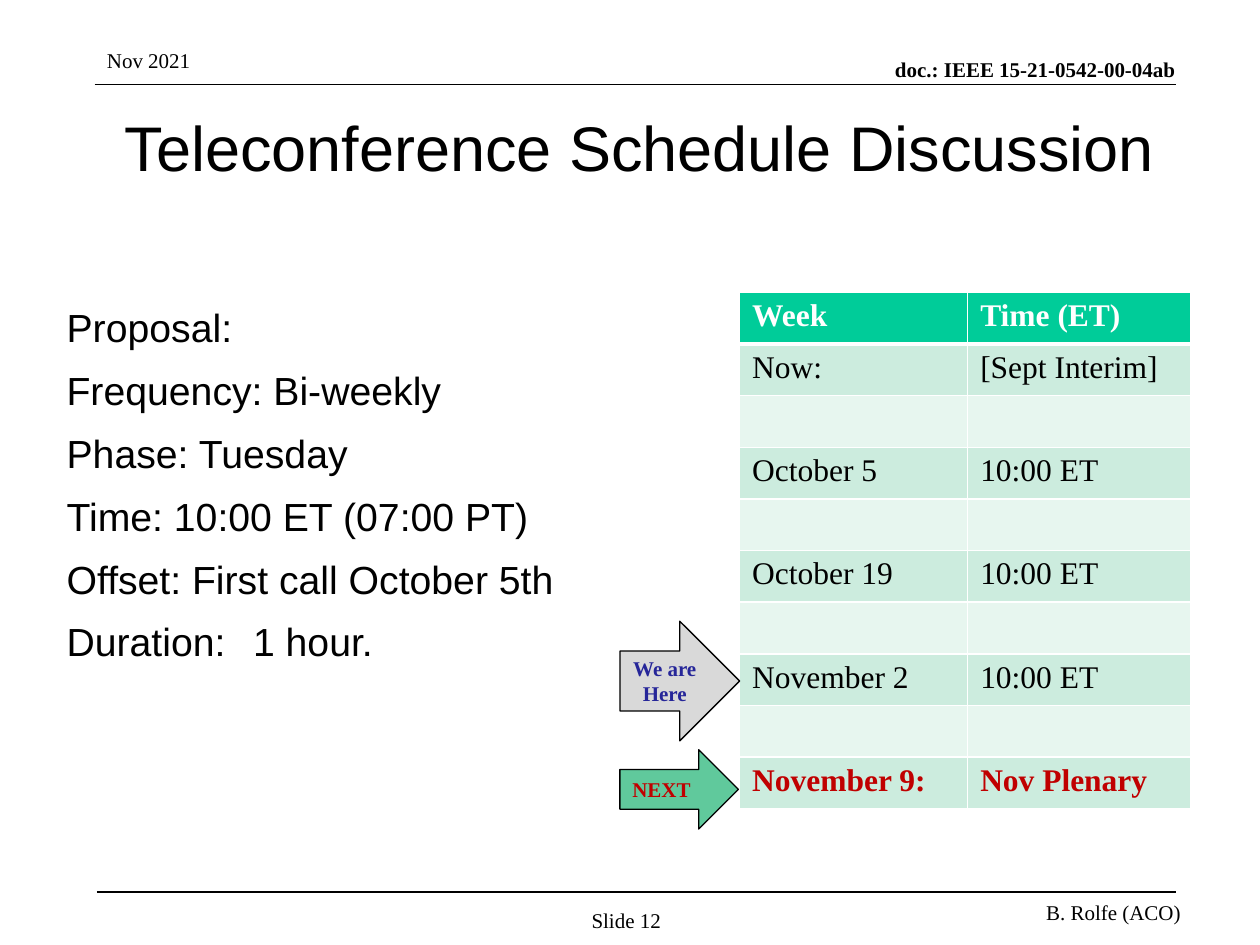
from lxml import etree
from pptx import Presentation
from pptx.dml.color import RGBColor
from pptx.enum.shapes import MSO_CONNECTOR, MSO_SHAPE
from pptx.enum.text import MSO_ANCHOR, PP_ALIGN
from pptx.oxml.ns import qn
from pptx.util import Inches, Pt

LEFT, CENTER, RIGHT = PP_ALIGN.LEFT, PP_ALIGN.CENTER, PP_ALIGN.RIGHT
TOP, MIDDLE, BOTTOM = MSO_ANCHOR.TOP, MSO_ANCHOR.MIDDLE, MSO_ANCHOR.BOTTOM
SERIF, SANS = "Times New Roman", "Arial"
BLACK, WHITE, RED, NAVY = "000000", "FFFFFF", "C00000", "262699"
HEADER_FILL, BAND_FILLS = "00CC99", ("E7F6EF", "CCECDE")
PADDING, NO_PADDING = (0.1, 0.05, 0.1, 0.05), (0, 0, 0, 0)

TITLE = "Teleconference Schedule Discussion"
PROPOSAL = [
    "Proposal:",
    "Frequency: Bi-weekly",
    "Phase: Tuesday",
    "Time: 10:00 ET (07:00 PT)",
    "Offset: First call October 5th",
    "Duration: \t1 hour.",
]
BLANK_WEEK = ("", "")
SCHEDULE = [
    ("Week", "Time (ET)"),
    ("Now:", "[Sept Interim]"),
    BLANK_WEEK,
    ("October 5", "10:00 ET"),
    BLANK_WEEK,
    ("October 19", "10:00 ET"),
    BLANK_WEEK,
    ("November 2", "10:00 ET"),
    BLANK_WEEK,
    ("November 9:", "Nov Plenary"),
]
# text, box, text options
PAGE_LABELS = [
    ("doc.: IEEE 15-21-0542-00-04ab", (5, 0.45, 4.33, 0.2),
     dict(align=RIGHT, anchor=BOTTOM, bold=True, insets=NO_PADDING)),
    ("Nov 2021", (0.75, 0.33, 1.92, 0.31), {}),
    ("B. Rolfe (ACO)", (5.37, 7.09, 4.1, 0.31), dict(align=RIGHT)),
    ("Slide 12", (4.61, 7.17, 0.72, 0.26),
     dict(align=CENTER, anchor=MIDDLE, insets=NO_PADDING)),
]
RULES = [(0.75, 0.67), (0.77, 7.08)]  # left end, height on the page
RULE_RIGHT = 9.33
# text, box, fill, text colour, alignment
ARROWS = [
    ("NEXT", (4.92, 5.95, 0.94, 0.63), "60C99C", RED, LEFT),
    ("We are Here", (4.92, 4.93, 0.95, 0.95), "D9D9D9", NAVY, CENTER),
]
TABLE_LEFT, TABLE_TOP = 5.87, 2.32
COLUMN_WIDTHS, ROW_HEIGHT = (1.81, 1.77), 0.41


def rgb(color):
    return RGBColor.from_string(color)


def inches(values):
    return [Inches(value) for value in values]


def write(frame, lines, size=12, font=SERIF, color=BLACK, bold=False,
          align=LEFT, anchor=TOP, insets=PADDING, gap=0, tab=None):
    """Fill a text frame, one paragraph per line, gap points apart."""
    frame.word_wrap = True
    frame.vertical_anchor = anchor
    (frame.margin_left, frame.margin_top,
     frame.margin_right, frame.margin_bottom) = inches(insets)
    for index, line in enumerate(lines):
        paragraph = frame.paragraphs[0] if index == 0 else frame.add_paragraph()
        paragraph.alignment = align
        if index:
            paragraph.space_before = Pt(gap)
        if tab and "\t" in line:
            tabs = etree.SubElement(paragraph._p.get_or_add_pPr(), qn("a:tabLst"))
            etree.SubElement(tabs, qn("a:tab"), pos=str(Inches(tab)), algn="l")
        run = paragraph.add_run()
        run.text = line
        run.font.size, run.font.name, run.font.bold = Pt(size), font, bold
        run.font.color.rgb = rgb(color)


def add_text(slide, lines, box, **options):
    write(slide.shapes.add_textbox(*inches(box)).text_frame, lines, **options)


def add_rule(slide, left, height):
    rule = slide.shapes.add_connector(
        MSO_CONNECTOR.STRAIGHT, *inches((left, height, RULE_RIGHT, height)))
    rule.line.color.rgb = rgb(BLACK)
    rule.line.width = Pt(1)
    etree.SubElement(rule._element.spPr, qn("a:effectLst"))


def add_arrow(slide, label, box, fill, color, align):
    arrow = slide.shapes.add_shape(MSO_SHAPE.RIGHT_ARROW, *inches(box))
    arrow.shadow.inherit = False
    arrow.fill.solid()
    arrow.fill.fore_color.rgb = rgb(fill)
    arrow.line.color.rgb = rgb(BLACK)
    arrow.line.width = Pt(0.75)
    write(arrow.text_frame, [label], color=color, bold=True, align=align, anchor=MIDDLE)


def add_borders(cell, widths):
    """Draw white cell borders; widths maps a side (L, R, T, B) to points."""
    properties = cell._tc.get_or_add_tcPr()
    for side, width in widths.items():
        line = etree.SubElement(properties, qn(f"a:ln{side}"), w=str(Pt(width)))
        fill = etree.SubElement(line, qn("a:solidFill"))
        etree.SubElement(fill, qn("a:srgbClr"), val=WHITE)


def add_schedule(slide):
    box = (TABLE_LEFT, TABLE_TOP, sum(COLUMN_WIDTHS), ROW_HEIGHT * len(SCHEDULE))
    table = slide.shapes.add_table(
        len(SCHEDULE), len(COLUMN_WIDTHS), *inches(box)).table
    for column, width in zip(table.columns, COLUMN_WIDTHS):
        column.width = Inches(width)
    last = len(SCHEDULE) - 1
    for row, entries in enumerate(SCHEDULE):
        table.rows[row].height = Inches(ROW_HEIGHT)
        header = row == 0
        color = WHITE if header else RED if row == last else BLACK
        for column, entry in enumerate(entries):
            cell = table.cell(row, column)
            add_borders(cell, dict(L=1, R=1, T=3 if row == 1 else 1,
                                   B=3 if header else 1))
            cell.fill.solid()
            cell.fill.fore_color.rgb = rgb(HEADER_FILL if header else BAND_FILLS[row % 2])
            if entry:
                write(cell.text_frame, [entry], size=18, color=color,
                      bold=row in (0, last))


def main():
    deck = Presentation()
    deck.slide_width, deck.slide_height = inches((10, 7.5))
    slide = deck.slides.add_slide(deck.slide_layouts[6])
    for left, height in RULES:
        add_rule(slide, left, height)
    for label, box, options in PAGE_LABELS:
        add_text(slide, [label], box, **options)
    add_text(slide, [TITLE], (0.83, 0.75, 8.49, 0.82), size=36, font=SANS,
             align=CENTER, anchor=MIDDLE)
    add_text(slide, PROPOSAL, (0.43, 2.32, 5.28, 2.51), size=22.4, font=SANS,
             insets=(0.1, 0.09, 0.1, 0.05), gap=9, tab=1.48)
    add_schedule(slide)
    for arrow in ARROWS:
        add_arrow(slide, *arrow)
    deck.save("out.pptx")


if __name__ == "__main__":
    main()
